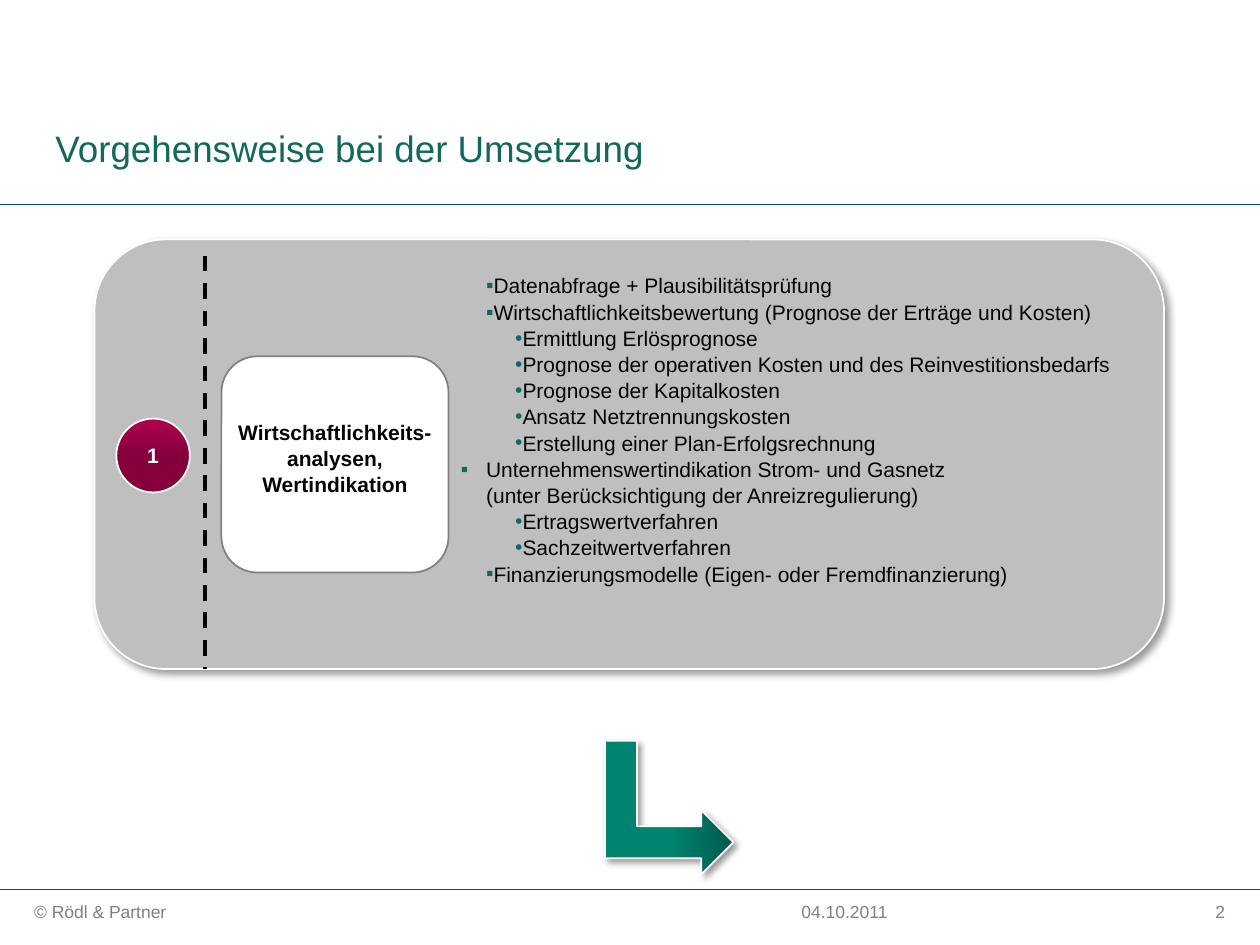
from lxml import etree
from pptx import Presentation
from pptx.dml.color import RGBColor
from pptx.enum.dml import MSO_LINE
from pptx.enum.shapes import MSO_CONNECTOR, MSO_SHAPE
from pptx.enum.text import MSO_ANCHOR, PP_ALIGN
from pptx.oxml.ns import qn
from pptx.util import Pt

LEFT, CENTER, RIGHT = PP_ALIGN.LEFT, PP_ALIGN.CENTER, PP_ALIGN.RIGHT
TOP, MIDDLE = MSO_ANCHOR.TOP, MSO_ANCHOR.MIDDLE
ROUNDED, OVAL, BENT_ARROW = (
    MSO_SHAPE.ROUNDED_RECTANGLE, MSO_SHAPE.OVAL, MSO_SHAPE.BENT_UP_ARROW)
STRAIGHT, DASH = MSO_CONNECTOR.STRAIGHT, MSO_LINE.DASH

FONT = "Arial"
TEXT, GREY, WHITE = "040404", "808080", "FFFFFF"
RULE_GREEN, TITLE_GREEN, BULLET_GREEN = "005A4C", "10695A", "106A5B"
BODY_SPACING = 1.04
INSETS = (7.2, 3.6, 7.2, 3.6)
FOOTER_INSETS = (0, 6.5, 0, 0)

# Bullet styles: character, level, left margin, first-line indent
MAIN = ("▪", 0, 0, 14.4)
HANGING = ("▪", 0, 14.4, -14.4)
SUB = ("•", 1, 18, 13)

STEPS = [
    (MAIN, "Datenabfrage + Plausibilitätsprüfung"),
    (MAIN, "Wirtschaftlichkeitsbewertung (Prognose der Erträge und Kosten)"),
    (SUB, "Ermittlung Erlösprognose"),
    (SUB, "Prognose der operativen Kosten und des Reinvestitionsbedarfs"),
    (SUB, "Prognose der Kapitalkosten"),
    (SUB, "Ansatz Netztrennungskosten"),
    (SUB, "Erstellung einer Plan-Erfolgsrechnung"),
    (HANGING, "Unternehmenswertindikation Strom- und Gasnetz \n"
              "(unter Berücksichtigung der Anreizregulierung)"),
    (SUB, "Ertragswertverfahren"),
    (SUB, "Sachzeitwertverfahren"),
    (MAIN, "Finanzierungsmodelle (Eigen- oder Fremdfinanzierung)"),
]


def color(value):
    return RGBColor.from_string(value)


def set_frame(frame, insets=INSETS, anchor=TOP, wrap=True):
    frame.margin_left, frame.margin_top, frame.margin_right, frame.margin_bottom = (
        Pt(inset) for inset in insets)
    frame.vertical_anchor = anchor
    frame.word_wrap = wrap


def write(paragraph, text, size, font_color, align=LEFT, bold=False, spacing=None):
    paragraph.text = text
    paragraph.alignment = align
    if spacing:
        paragraph.line_spacing = spacing
    font = paragraph.font
    font.name, font.size, font.bold = FONT, Pt(size), bold
    font.color.rgb = color(font_color)


def add_bullet(paragraph, style):
    character, level, margin, indent = style
    paragraph.level = level
    properties = paragraph._p.get_or_add_pPr()
    properties.set("marL", str(Pt(margin)))
    properties.set("indent", str(Pt(indent)))
    bullet_color = etree.SubElement(properties, qn("a:buClr"))
    etree.SubElement(bullet_color, qn("a:srgbClr"), val=BULLET_GREEN)
    etree.SubElement(properties, qn("a:buFont"), typeface=FONT)
    etree.SubElement(properties, qn("a:buChar"), char=character)


def add_text(slide, box, text, size, font_color, insets=INSETS, **style):
    text_box = slide.shapes.add_textbox(*map(Pt, box))
    set_frame(text_box.text_frame, insets)
    write(text_box.text_frame.paragraphs[0], text, size, font_color, **style)


def add_steps(slide, box):
    frame = slide.shapes.add_textbox(*map(Pt, box)).text_frame
    set_frame(frame)
    for index, (style, text) in enumerate(STEPS):
        paragraph = frame.add_paragraph() if index else frame.paragraphs[0]
        add_bullet(paragraph, style)
        write(paragraph, text, 12, TEXT, spacing=BODY_SPACING)


def add_shape(slide, kind, box, fill, line, shadow=False):
    """Fill is one colour, or a pair for a downward gradient ending halfway."""
    shape = slide.shapes.add_shape(kind, *map(Pt, box))
    if isinstance(fill, str):
        shape.fill.solid()
        shape.fill.fore_color.rgb = color(fill)
    else:
        shape.fill.gradient()
        shape.fill.gradient_angle = 270
        for stop, value, position in zip(shape.fill.gradient_stops, fill, (0, 0.5)):
            stop.color.rgb = color(value)
            stop.position = position
    shape.line.color.rgb = color(line)
    shape.line.width = Pt(1)
    shape.shadow.inherit = False
    if shadow:
        effects = shape._element.spPr.find(qn("a:effectLst"))
        outer = etree.SubElement(
            effects, qn("a:outerShdw"), blurRad=str(Pt(4)), dist=str(Pt(3)),
            dir="2700000", algn="tl", rotWithShape="0")
        shade = etree.SubElement(outer, qn("a:srgbClr"), val="000000")
        etree.SubElement(shade, qn("a:alpha"), val="40000")
    return shape


def add_line(slide, start, end, line_color, width, dash=None):
    connector = slide.shapes.add_connector(STRAIGHT, *map(Pt, start + end))
    connector.line.color.rgb = color(line_color)
    connector.line.width = Pt(width)
    if dash:
        connector.line.dash_style = dash
    etree.SubElement(connector._element.spPr, qn("a:effectLst"))


def add_title(slide, text):
    title = slide.shapes.title
    title.left, title.top, title.width, title.height = map(Pt, (25.2, 63.4, 604, 41.8))
    set_frame(title.text_frame, (6.5, 2.9, 6.5, 2.9), MIDDLE)
    write(title.text_frame.paragraphs[0], text, 21, TITLE_GREEN)


def main():
    presentation = Presentation()
    presentation.slide_width, presentation.slide_height = Pt(720), Pt(540)
    slide = presentation.slides.add_slide(presentation.slide_layouts[5])

    # Title, rules and footer
    add_title(slide, "Vorgehensweise bei der Umsetzung")
    for y in (116.7, 508.3):
        add_line(slide, (0, y), (720, y), RULE_GREEN, 0.25)
    for left, width, text, align in (
            (19.6, 368.5, "© Rödl & Partner", LEFT),
            (388.1, 119, "04.10.2011", RIGHT),
            (530, 170, "2", RIGHT)):
        add_text(slide, (left, 508.3, width, 31.7), text, 10, GREY,
                 FOOTER_INSETS, align=align)

    # Panel with divider and step number
    add_shape(slide, ROUNDED, (54, 136.8, 611.2, 245.5), "BFBFBF", WHITE, shadow=True)
    add_line(slide, (117.2, 146.2), (117.2, 382.3), TEXT, 2.25, DASH)
    number = add_shape(slide, OVAL, (66.5, 239.2, 42, 42.2), ("B1004F", "85003B"), WHITE)
    set_frame(number.text_frame, anchor=MIDDLE, wrap=False)
    write(number.text_frame.paragraphs[0], "1", 12, WHITE, CENTER, bold=True)

    # Work steps and their heading
    add_steps(slide, (256.3, 151.9, 409, 184.3))
    add_shape(slide, ROUNDED, (126.5, 203.6, 129.8, 123.6), WHITE, GREY)
    add_text(slide, (126.5, 235.4, 129.8, 67.7),
             "Wirtschaftlichkeits-analysen,\nWertindikation", 12, TEXT,
             align=CENTER, bold=True, spacing=BODY_SPACING)

    # Arrow to the next step
    arrow = add_shape(slide, BENT_ARROW, (344.2, 424.8, 76.3, 73.4),
                      ("005A4C", "00846F"), WHITE, shadow=True)
    arrow.rotation = 90

    presentation.save("out.pptx")


if __name__ == "__main__":
    main()
